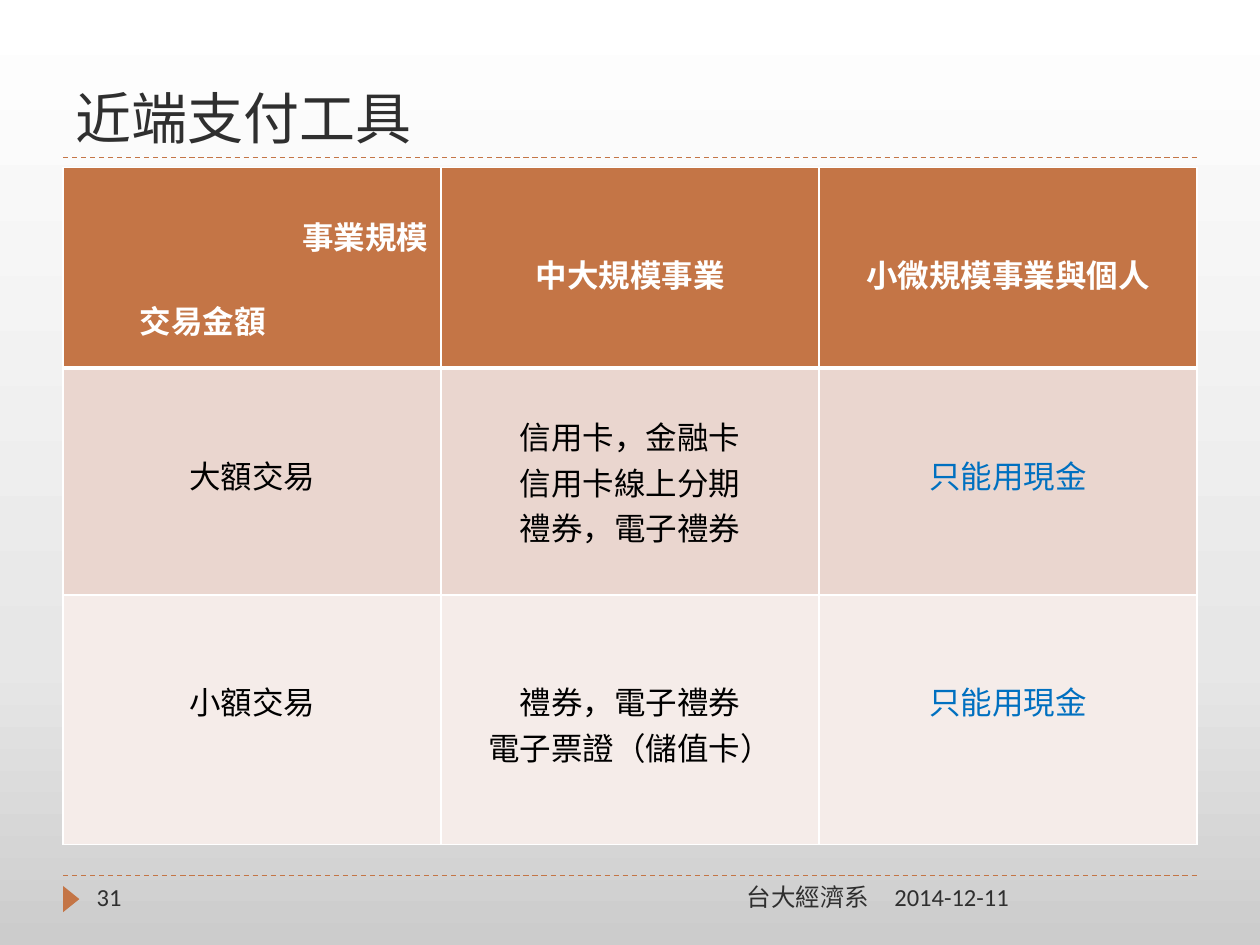
import copy
from dataclasses import dataclass

import pptx
import pptx.dml.color
import pptx.enum.dml
import pptx.enum.shapes
import pptx.enum.text
import pptx.oxml
import pptx.oxml.ns
import pptx.util

Cm = pptx.util.Cm
Align = pptx.enum.text.PP_ALIGN
Anchor = pptx.enum.text.MSO_ANCHOR


@dataclass(frozen=True)
class Theme:
    accent: str = "C47546"
    ink: str = "2F2F2F"
    white: str = "FFFFFF"
    black: str = "000000"
    blue: str = "0070C0"
    band_dark: str = "EAD6CF"
    band_light: str = "F5ECE9"
    background: tuple = ((0, "CCCCCC"), (0.3, "E7E7E7"), (1, "FFFFFF"))
    title_font: str = "Roboto Slab"
    body_font: str = "Calibri"
    title_size: float = 32
    table_size: float = 18
    footer_size: float = 14
    line_gap: float = 22


THEME = Theme()


@dataclass(frozen=True)
class Label:
    """A text box, with its place in centimetres."""
    text: str
    left: float
    top: float
    width: float
    height: float
    size: float = THEME.footer_size
    font: str = THEME.body_font
    align: Align = Align.LEFT
    anchor: Anchor = Anchor.TOP


@dataclass(frozen=True)
class TableCell:
    """Lines of a cell, and how many line gaps lie above them."""
    lines: tuple
    gaps: int = 2
    color: str = THEME.black


@dataclass(frozen=True)
class TableRow:
    height: float
    fill: str
    cells: tuple
    bold: bool = False
    top_border: float = 1
    bottom_border: float = 1


LABELS = (
    Label("近端支付工具", 1.27, 0.43, 22.86, 2.74, THEME.title_size,
          THEME.title_font, anchor=Anchor.BOTTOM),
    Label("31", 1.7, 17.65, 5.5, 1.02),
    Label("台大經濟系", 8.05, 17.65, 9.73, 1.02, align=Align.RIGHT),
    Label("2014-12-11", 17.78, 17.65, 6.35, 1.02),
)

CASH_ONLY = TableCell(("只能用現金",), color=THEME.blue)
ROWS = (
    TableRow(4.04, THEME.accent, (
        TableCell(("事業規模", "交易金額"), 1, THEME.white),
        TableCell(("中大規模事業",), color=THEME.white),
        TableCell(("小微規模事業與個人",), color=THEME.white),
    ), bold=True, bottom_border=3),
    TableRow(4.57, THEME.band_dark, (
        TableCell(("大額交易",)),
        TableCell(("信用卡，金融卡", "信用卡線上分期", "禮券，電子禮券"), 1),
        CASH_ONLY,
    ), top_border=3),
    TableRow(5.03, THEME.band_light, (
        TableCell(("小額交易",)),
        TableCell(("禮券，電子禮券", "電子票證（儲值卡）")),
        CASH_ONLY,
    )),
)


def rgb(color: str) -> pptx.dml.color.RGBColor:
    return pptx.dml.color.RGBColor.from_string(color)


def write_text(paragraph, text: str, *, size: float, color: str,
               font: str = THEME.body_font, bold: bool = False,
               align: Align = Align.LEFT) -> None:
    paragraph.alignment = align
    run = paragraph.add_run()
    run.text = text
    run.font.name = font
    run.font.size = pptx.util.Pt(size)
    run.font.bold = bold
    run.font.color.rgb = rgb(color)


def paint_background(slide) -> None:
    fill = slide.background.fill
    fill.gradient()
    fill.gradient_angle = 90
    stop_list = next(slide.element.iter(pptx.oxml.ns.qn("a:gsLst")))
    stop_list.append(copy.deepcopy(stop_list[-1]))
    for stop, (position, color) in zip(fill.gradient_stops, THEME.background):
        stop.position = position
        stop.color.rgb = rgb(color)


def add_rule(slide, top: float) -> None:
    connector = slide.shapes.add_connector(
        pptx.enum.shapes.MSO_CONNECTOR.STRAIGHT,
        Cm(1.27), Cm(top), Cm(24.13), Cm(top))
    connector.line.color.rgb = rgb(THEME.accent)
    connector.line.width = pptx.util.Pt(0.75)
    connector.line.dash_style = pptx.enum.dml.MSO_LINE.DASH
    properties = connector.element.spPr
    properties.append(properties.makeelement(pptx.oxml.ns.qn("a:effectLst")))


def add_page_marker(slide) -> None:
    shape = slide.shapes.add_shape(
        pptx.enum.shapes.MSO_SHAPE.ISOSCELES_TRIANGLE,
        Cm(1.17), Cm(17.96), Cm(0.53), Cm(0.33))
    shape.rotation = 90
    shape.shadow.inherit = False
    shape.fill.solid()
    shape.fill.fore_color.rgb = rgb(THEME.accent)
    shape.line.fill.background()


def add_label(slide, label: Label) -> None:
    box = slide.shapes.add_textbox(Cm(label.left), Cm(label.top),
                                   Cm(label.width), Cm(label.height))
    frame = box.text_frame
    frame.word_wrap = True
    frame.vertical_anchor = label.anchor
    write_text(frame.paragraphs[0], label.text, size=label.size,
               font=label.font, color=THEME.ink, align=label.align)


def set_borders(cell, row: TableRow) -> None:
    properties = cell._tc.get_or_add_tcPr()
    widths = {"L": 1, "R": 1, "T": row.top_border, "B": row.bottom_border}
    for side, width in widths.items():
        properties.append(pptx.oxml.parse_xml(
            f'<a:ln{side} {pptx.oxml.ns.nsdecls("a")} w="{pptx.util.Pt(width)}">'
            f'<a:solidFill><a:srgbClr val="{THEME.white}"/></a:solidFill>'
            f'</a:ln{side}>'))


def fill_cell(cell, row: TableRow, content: TableCell) -> None:
    set_borders(cell, row)
    cell.fill.solid()
    cell.fill.fore_color.rgb = rgb(row.fill)
    cell.margin_top = Cm(0.13) + content.gaps * pptx.util.Pt(THEME.line_gap)
    frame = cell.text_frame
    for index, line in enumerate(content.lines):
        paragraph = frame.add_paragraph() if index else frame.paragraphs[0]
        write_text(paragraph, line, size=THEME.table_size, bold=row.bold,
                   color=content.color, align=Align.CENTER)


def add_table(slide) -> None:
    columns = len(ROWS[0].cells)
    table = slide.shapes.add_table(
        len(ROWS), columns, Cm(1.27), Cm(3.38), Cm(22.86),
        Cm(sum(row.height for row in ROWS))).table
    for row_index, row in enumerate(ROWS):
        table.rows[row_index].height = Cm(row.height)
        for column_index, content in enumerate(row.cells):
            fill_cell(table.cell(row_index, column_index), row, content)

    # The corner cell names the column axis at right, the row axis at left
    column_axis, row_axis = table.cell(0, 0).text_frame.paragraphs
    column_axis.alignment = Align.RIGHT
    row_axis.alignment = Align.LEFT
    row_axis.space_before = pptx.util.Pt(THEME.line_gap)
    row_axis._p.get_or_add_pPr().set("marL", str(Cm(1.29)))


def main() -> None:
    presentation = pptx.Presentation()
    presentation.slide_width = Cm(25.4)
    presentation.slide_height = Cm(19.05)
    slide = presentation.slides.add_slide(presentation.slide_layouts[6])

    # Background and frame
    paint_background(slide)
    for top in (17.65, 3.18):
        add_rule(slide, top)
    add_page_marker(slide)

    # Title, footer and table
    for label in LABELS:
        add_label(slide, label)
    add_table(slide)

    presentation.save("out.pptx")


if __name__ == "__main__":
    main()
